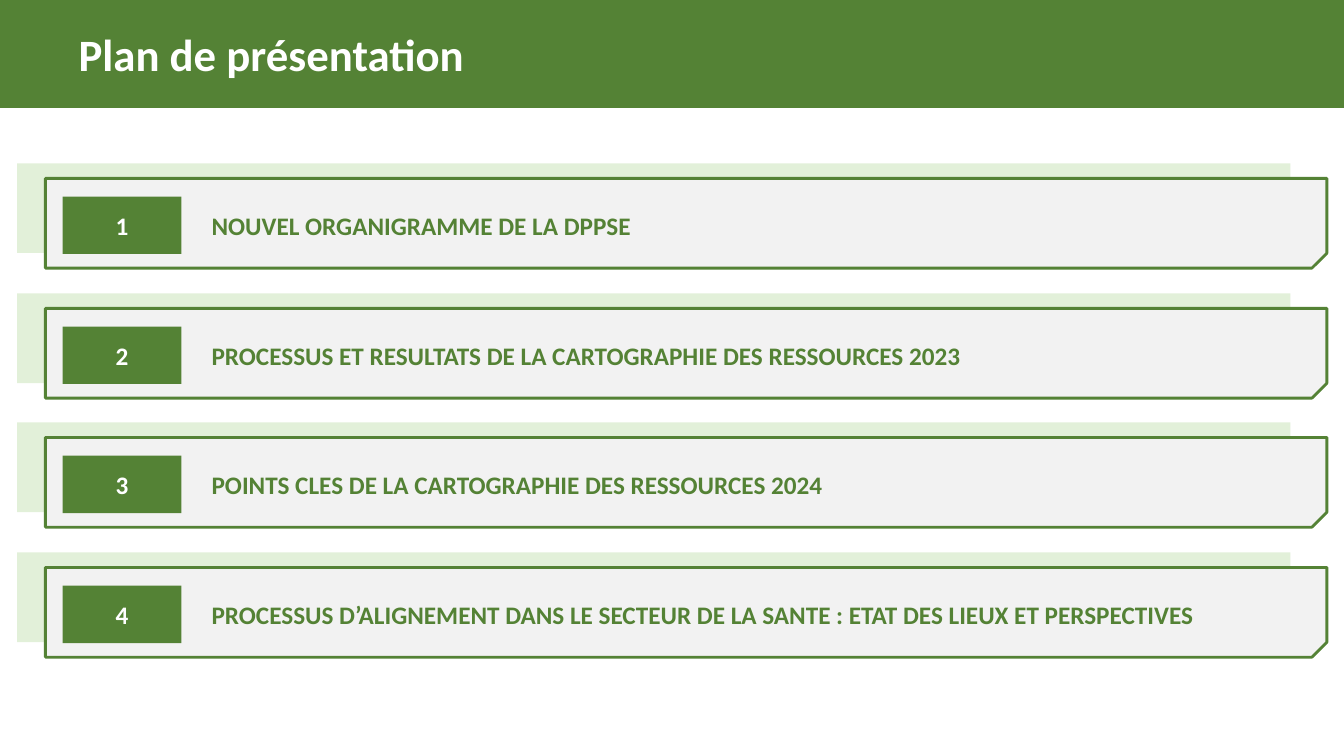
from pptx import Presentation
from pptx.dml.color import RGBColor
from pptx.enum.shapes import MSO_SHAPE
from pptx.enum.text import MSO_ANCHOR, PP_ALIGN
from pptx.util import Pt

PX = 9144
SLIDE_W, SLIDE_H = 1333, 750
GREEN = RGBColor(0x54, 0x82, 0x35)
PALE_GREEN = RGBColor(0xE2, 0xF0, 0xD9)
GREY = RGBColor(0xF2, 0xF2, 0xF2)
WHITE = RGBColor(0xFF, 0xFF, 0xFF)
RECT, SNIPPED = MSO_SHAPE.RECTANGLE, MSO_SHAPE.SNIP_1_RECTANGLE
MIDDLE = MSO_ANCHOR.MIDDLE
LEFT, CENTER, JUSTIFY = PP_ALIGN.LEFT, PP_ALIGN.CENTER, PP_ALIGN.JUSTIFY

TITLE = "Plan de présentation"
TOPICS = [
    "NOUVEL ORGANIGRAMME DE LA DPPSE",
    "PROCESSUS ET RESULTATS DE LA CARTOGRAPHIE DES RESSOURCES 2023",
    "POINTS CLES DE LA CARTOGRAPHIE DES RESSOURCES 2024",
    "PROCESSUS D’ALIGNEMENT DANS LE SECTEUR DE LA SANTE : ETAT DES LIEUX ET PERSPECTIVES",
]
AGENDA_BOX = (17, 162, 1299, 490)
ROW_H = 104


def emu(*lengths):
    """Convert px lengths to EMU."""
    return [length * PX for length in lengths]


def add_block(shapes, kind, box, fill, line=None):
    """Add a flat filled shape, outlined when a line colour is given."""
    sp = shapes.add_shape(kind, *emu(*box))
    sp.shadow.inherit = False
    sp.fill.solid()
    sp.fill.fore_color.rgb = fill
    if line is None:
        sp.line.fill.background()
    else:
        sp.line.color.rgb = line
        sp.line.width = Pt(2)
    return sp


def write(sp, text, size, color, align):
    """Write one bold, vertically centred paragraph."""
    tf = sp.text_frame
    tf.word_wrap = True
    tf.vertical_anchor = MIDDLE
    p = tf.paragraphs[0]
    p.text = text
    p.alignment = align
    p.font.name = "Calibri"
    p.font.size = Pt(size)
    p.font.bold = True
    p.font.color.rgb = color


def add_header(s, x, y, w, h):
    """Put the title over a full-width green band."""
    band = add_block(s.shapes, RECT, (x, y, w, h), GREEN)
    title = s.shapes.title
    title.element.addprevious(band.element)
    title.left, title.top, title.width, title.height = emu(x + 68, y, 1228, h)
    write(title, TITLE, 32, WHITE, JUSTIFY)


def add_topic(s, x, y, w, h, number, topic):
    """Add one numbered agenda row as a group."""
    shapes = s.shapes.add_group_shape().shapes
    card_h = h - 15
    add_block(shapes, RECT, (x, y, w - 36, card_h), PALE_GREEN)
    card = add_block(shapes, SNIPPED, (x + 28, y + 15, w - 28, card_h), GREY, GREEN)
    card.element.spPr.get_or_add_xfrm().set("flipV", "1")
    badge = add_block(shapes, RECT, (x + 45, y + 33, 118, 57), GREEN)
    write(badge, str(number), 18, WHITE, CENTER)
    label = shapes.add_textbox(*emu(x + 183, y + 33, w - 218, 57))
    write(label, topic, 18, GREEN, LEFT)


def add_agenda(s, x, y, w, h):
    """Spread the agenda rows evenly down the box."""
    pitch = (h - ROW_H) / (len(TOPICS) - 1)
    for i, topic in enumerate(TOPICS):
        add_topic(s, x, y + round(i * pitch), w, ROW_H, i + 1, topic)


def main():
    """Build and save the agenda slide."""
    prs = Presentation()
    prs.slide_width, prs.slide_height = emu(SLIDE_W, SLIDE_H)
    s = prs.slides.add_slide(prs.slide_layouts[5])
    add_header(s, 0, 0, SLIDE_W, 107)
    add_agenda(s, *AGENDA_BOX)
    prs.save("out.pptx")


if __name__ == "__main__":
    main()
